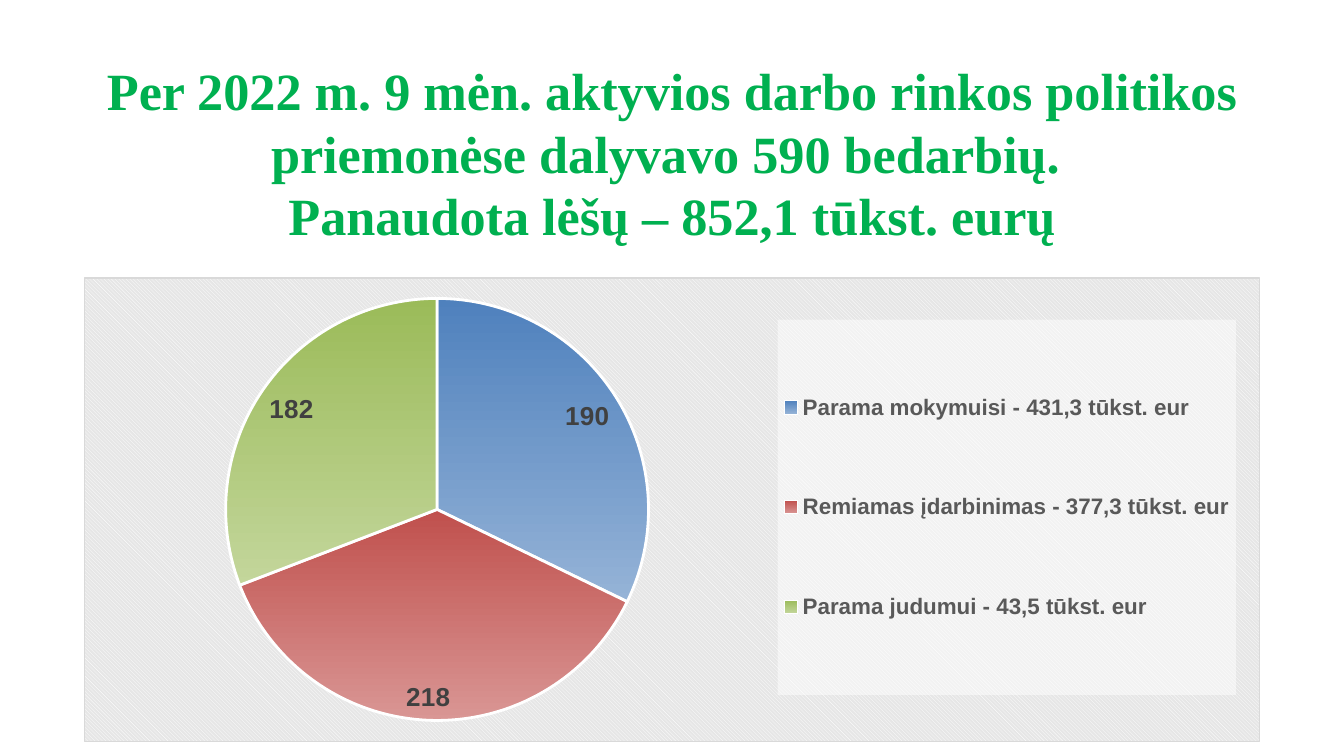
from lxml import etree
from pptx import Presentation
from pptx.chart.data import CategoryChartData
from pptx.dml.color import RGBColor
from pptx.enum.chart import XL_CHART_TYPE, XL_LABEL_POSITION, XL_LEGEND_POSITION
from pptx.enum.text import MSO_ANCHOR, PP_ALIGN
from pptx.oxml import parse_xml
from pptx.oxml.ns import nsdecls, qn
from pptx.util import Pt

PIE = XL_CHART_TYPE.PIE
INSIDE_END = XL_LABEL_POSITION.INSIDE_END
RIGHT = XL_LEGEND_POSITION.RIGHT
BOTTOM = MSO_ANCHOR.BOTTOM
CENTER = PP_ALIGN.CENTER
SCALE = 9525

TITLE = [
    "Per 2022 m. 9 mėn. aktyvios darbo rinkos politikos priemonėse dalyvavo 590 bedarbių. ",
    "Panaudota lėšų – 852,1 tūkst. eurų",
]
MEASURES = [
    ("Parama mokymuisi - 431,3 tūkst. eur", 190, "4F81BD", "95B3D7"),
    ("Remiamas įdarbinimas - 377,3 tūkst. eur", 218, "C0504D", "D99694"),
    ("Parama judumui - 43,5 tūkst. eur", 182, "9BBB59", "C3D69B"),
]
CHART_FILL = (
    '<a:pattFill prst="dkDnDiag"><a:fgClr><a:srgbClr val="FFFFFF"/></a:fgClr>'
    '<a:bgClr><a:srgbClr val="E6E6E6"/></a:bgClr></a:pattFill>'
    '<a:ln w="9525"><a:solidFill><a:srgbClr val="D9D9D9"/></a:solidFill></a:ln>'
)
LEGEND_FILL = '<a:solidFill><a:srgbClr val="FFFFFF"><a:alpha val="50000"/></a:srgbClr></a:solidFill>'


def px(n):
    """Turn px into EMU."""
    return n * SCALE


def color(value):
    """Turn a hex string into a colour."""
    return RGBColor.from_string(value)


def style_font(font, name, size, value, bold=False):
    """Set face, size, colour and weight of a font."""
    font.name, font.size, font.bold = name, Pt(size), bold
    font.color.rgb = color(value)


def add_format(sibling, content):
    """Add chart shape properties after a sibling element."""
    sibling.addnext(parse_xml(f'<c:spPr {nsdecls("c", "a")}>{content}</c:spPr>'))


def set_layout(parent, index, box):
    """Place a chart part by fractions of the chart area."""
    for old in parent.findall(qn("c:layout")):
        parent.remove(old)
    layout = etree.Element(qn("c:layout"))
    manual = etree.SubElement(layout, qn("c:manualLayout"))
    if parent.tag == qn("c:plotArea"):
        etree.SubElement(manual, qn("c:layoutTarget")).set("val", "inner")
    for tag in ("xMode", "yMode"):
        etree.SubElement(manual, qn(f"c:{tag}")).set("val", "edge")
    for tag, value in zip("xywh", box):
        etree.SubElement(manual, qn(f"c:{tag}")).set("val", str(value))
    parent.insert(index, layout)


def add_title(s, x, y, w, h):
    """Add the centred heading, sitting on the bottom of its box."""
    tf = s.shapes.add_textbox(px(x), px(y), px(w), px(h)).text_frame
    tf.word_wrap = True
    tf.vertical_anchor = BOTTOM
    tf.margin_left = tf.margin_top = tf.margin_right = tf.margin_bottom = 0
    p = tf.paragraphs[0]
    p.alignment = CENTER
    for i, line in enumerate(TITLE):
        if i:
            p.add_line_break()
        r = p.add_run()
        r.text = line
        style_font(r.font, "Times New Roman", 28, "00B050", True)


def add_pie(s, x, y, w, h):
    """Add the pie of participants with its legend."""
    data = CategoryChartData()
    data.categories = [m[0] for m in MEASURES]
    data.add_series("Series 1", [m[1] for m in MEASURES])
    chart = s.shapes.add_chart(PIE, px(x), px(y), px(w), px(h), data).chart
    chart.has_title = False
    style_font(chart.font, "Arial", 10, "000000")
    plot = chart.plots[0]
    plot.vary_by_categories = True

    for i, (_, _, top, bottom) in enumerate(MEASURES):
        form = plot.series[0].points[i].format
        form.fill.gradient()
        form.fill.gradient_angle = 270
        for stop, value in zip(form.fill.gradient_stops, (top, bottom)):
            stop.color.rgb = color(value)
            stop.position = 0 if value == top else 1
        form.line.color.rgb = color("FFFFFF")
        form.line.width = Pt(1.5)

    labels = plot.series[0].data_labels
    labels.show_value = True
    labels.position = INSIDE_END
    style_font(labels.font, "Arial", 14, "404040", True)

    chart.has_legend = True
    legend = chart.legend
    legend.position = RIGHT
    legend.include_in_layout = False
    style_font(legend.font, "Arial", 12, "595959", True)

    root = chart._chartSpace
    frame = root.find(qn("c:chart"))
    add_format(frame, CHART_FILL)
    set_layout(frame.find(qn("c:plotArea")), 0, (0.12, 0.04, 0.36, 0.92))
    key = frame.find(qn("c:legend"))
    set_layout(key, 1, (0.59, 0.09, 0.39, 0.81))
    add_format(key.find(qn("c:overlay")), LEGEND_FILL)


def main():
    """Build and save the slide."""
    prs = Presentation()
    prs.slide_width, prs.slide_height = px(960), px(540)
    s = prs.slides.add_slide(prs.slide_layouts[6])
    add_title(s, 28, 27, 904, 149)
    add_pie(s, 60, 198, 840, 332)
    prs.save("out.pptx")


if __name__ == "__main__":
    main()
